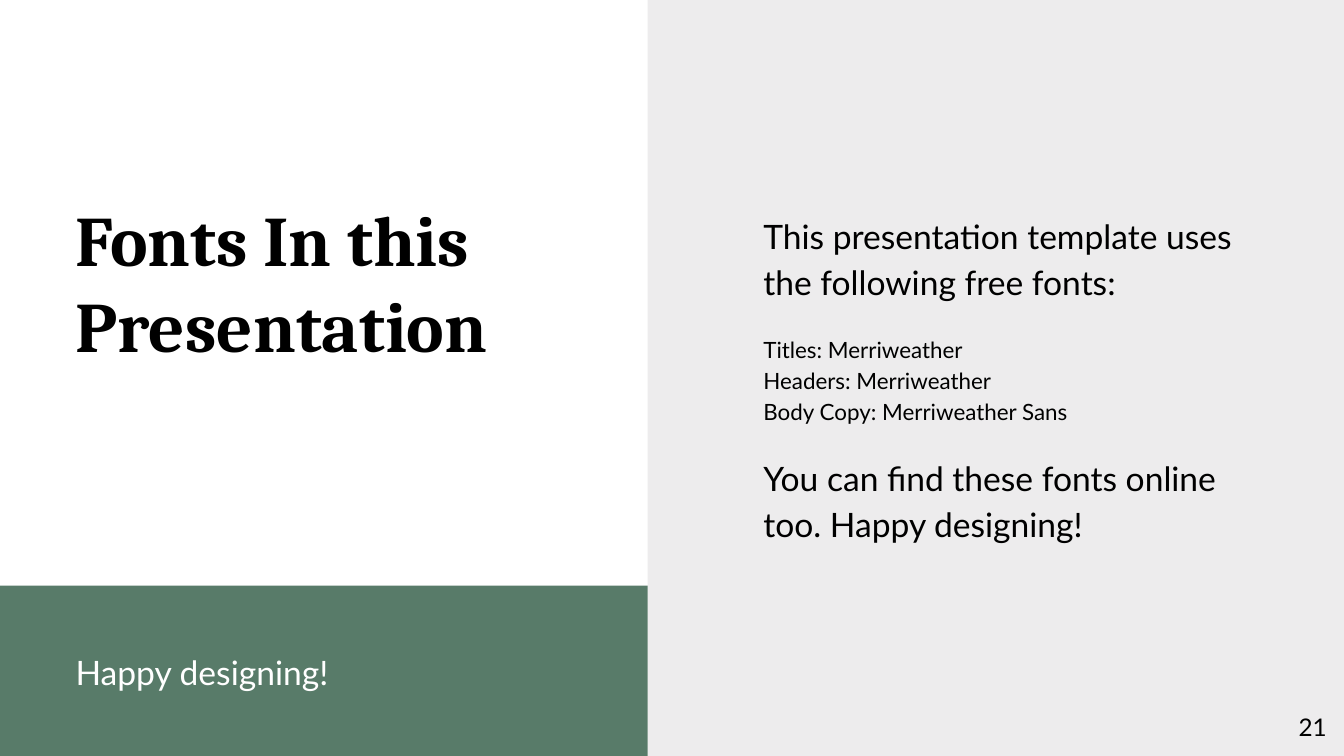
import pptx
import pptx.util
import pptx.dml.color
import pptx.enum.shapes
import pptx.enum.text

Pt = pptx.util.Pt
ALIGN = pptx.enum.text.PP_ALIGN
ANCHOR = pptx.enum.text.MSO_ANCHOR
AUTO = pptx.enum.text.MSO_AUTO_SIZE


def paint(target, value):
    """Give a fill or a font a solid colour from a hex string."""
    colour = pptx.dml.color.RGBColor.from_string(value)
    if hasattr(target, "solid"):
        target.solid()
        target.fore_color.rgb = colour
    else:
        target.color.rgb = colour


def write(box, lines, colour, font, spacing=1.15, align=ALIGN.LEFT, **frame_format):
    """Fill a box with one paragraph per line, all formatted alike."""
    frame = box.text_frame
    frame_values = {
        "word_wrap": True, "auto_size": AUTO.SHAPE_TO_FIT_TEXT, "vertical_anchor": ANCHOR.TOP,
        "margin_left": 0, "margin_top": 0, "margin_right": 0, "margin_bottom": 0,
    }
    for name, value in (frame_values | frame_format).items():
        setattr(frame, name, value)
    frame.text = "\n".join(lines)
    for para in frame.paragraphs:
        para.alignment = align
        para.line_spacing = spacing
        for span in para.runs:
            for name, value in font.items():
                setattr(span.font, name, value)
            paint(span.font, colour)


deck = pptx.Presentation()
deck.slide_width, deck.slide_height = Pt(720), Pt(405)
page = deck.slides.add_slide(deck.slide_layouts[5])
paint(page.background.fill, "EDECED")

# Left panel and green band
panel_width, band_top = 347, 313.8
for top, height, colour in [(0, 405, "FFFFFF"), (band_top, 405 - band_top, "587B69")]:
    panel = page.shapes.add_shape(
        pptx.enum.shapes.MSO_SHAPE.RECTANGLE, 0, Pt(top), Pt(panel_width), Pt(height))
    panel.shadow.inherit = False
    panel.line.fill.background()
    paint(panel.fill, colour)

# Title, brought in front of the panels
title = page.shapes.title
page.shapes.element.append(title.element)
title_format = {"left": Pt(40.5), "top": Pt(105), "width": Pt(258), "height": Pt(92)}
for name, value in title_format.items():
    setattr(title, name, value)
write(title, ["Fonts In this Presentation"], "000000",
      {"name": "Cambria", "size": Pt(38), "bold": True}, spacing=1.0)

# Subtitle in the band
subtitle = page.shapes.add_textbox(Pt(40.5), Pt(346.3), Pt(208), Pt(21.6))
write(subtitle, ["Happy designing!"], "FFFFFF", {"name": "Lato", "size": Pt(18)})

# Font notes on the right
notes = [
    (112.3, 46.8, 18, ["This presentation template uses the following free fonts:"]),
    (177.8, 48.2, 12, ["Titles: Merriweather", "Headers: Merriweather",
                       "Body Copy: Merriweather Sans"]),
    (241.9, 46.8, 18, ["You can find these fonts online too. Happy designing!"]),
]
group = page.shapes.add_group_shape()
for top, height, size, lines in notes:
    box = group.shapes.add_textbox(Pt(409), Pt(top), Pt(258), Pt(height))
    write(box, lines, "000000", {"name": "Lato", "size": Pt(size)})

# Page number
number = page.shapes.add_textbox(Pt(667.5), Pt(374), Pt(43.2), Pt(31))
write(number, ["21"], "000000", {"name": "Lato", "size": Pt(13)}, spacing=1.0,
      align=ALIGN.RIGHT, auto_size=AUTO.NONE, vertical_anchor=ANCHOR.MIDDLE)

deck.save("out.pptx")
